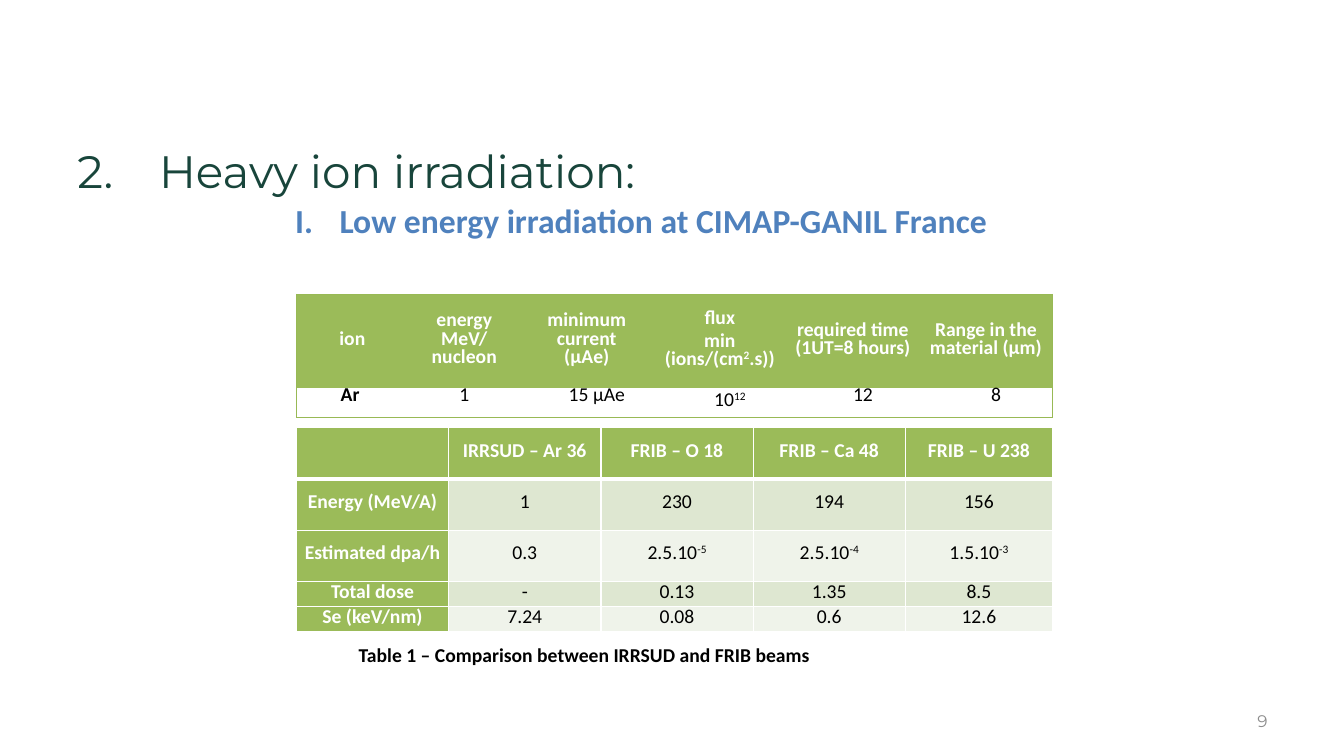
from dataclasses import dataclass
from typing import Any, Optional

import pptx
import pptx.dml.color
import pptx.enum.text
import pptx.oxml
import pptx.oxml.ns
import pptx.util
from pptx.util import Inches

ALIGN = pptx.enum.text.PP_ALIGN
ANCHOR = pptx.enum.text.MSO_ANCHOR


@dataclass(frozen=True)
class Theme:
    heading_font: str = "Montserrat"
    body_font: str = "Calibri"
    heading: str = "18453B"
    subheading: str = "4F81BD"
    page: str = "8C8C8C"
    black: str = "000000"
    white: str = "FFFFFF"
    green: str = "9BBB59"
    edge: str = "98B955"
    band_dark: str = "DEE7D1"
    band_light: str = "EFF3EA"
    heading_size: float = 32.4
    subheading_size: float = 24
    body_size: float = 14
    page_size: float = 12


@dataclass(frozen=True)
class Box:
    left: float
    top: float
    width: float
    height: float

    def lengths(self) -> tuple:
        return Inches(self.left), Inches(self.top), Inches(self.width), Inches(self.height)


@dataclass(frozen=True)
class Edge:
    color: str
    points: float


@dataclass(frozen=True)
class CellLook:
    fill: str
    color: str
    bold: bool
    edges: dict
    inset: float
    anchor: Any = ANCHOR.MIDDLE
    before: float = 0
    after: float = 0
    indent: float = 0


THEME = Theme()


def write(frame: Any, text: str, *, size: float = THEME.body_size,
          font: str = THEME.body_font, color: str = THEME.black, bold: bool = False,
          align: Any = ALIGN.LEFT, spacing: Optional[float] = None, before: float = 0,
          after: float = 0, margin: float = 0, indent: float = 0,
          numbering: str = "", start: int = 1) -> None:
    lines = text.split("\n")
    for index, line in enumerate(lines):
        paragraph = frame.add_paragraph() if index else frame.paragraphs[0]
        paragraph.alignment = align
        if spacing:
            paragraph.line_spacing = pptx.util.Pt(spacing)
        if index:
            paragraph.space_before = pptx.util.Pt(before)
        if index == len(lines) - 1:
            paragraph.space_after = pptx.util.Pt(after)
        properties = paragraph._p.get_or_add_pPr()
        properties.set("marL", str(Inches(margin)))
        properties.set("indent", str(Inches(indent)))
        if numbering:
            number = pptx.oxml.parse_xml(
                f'<a:buAutoNum {pptx.oxml.ns.nsdecls("a")} type="{numbering}" startAt="{start}"/>')
            properties.append(number)
        for part_index, part in enumerate(line.split("\v")):
            if part_index:
                paragraph.add_line_break()
            for piece_index, piece in enumerate(part.split("^")):
                if not piece:
                    continue
                run = paragraph.add_run()
                run.text = piece
                run.font.size = pptx.util.Pt(size)
                run.font.name = font
                run.font.bold = bold
                run.font.color.rgb = pptx.dml.color.RGBColor.from_string(color)
                if piece_index % 2:
                    run.font._element.set("baseline", "30000")


def add_text(slide: Any, box: Box, text: str, *, anchor: Any = ANCHOR.TOP,
             wrap: bool = True, **style: Any) -> None:
    frame = slide.shapes.add_textbox(*box.lengths()).text_frame
    frame.word_wrap = wrap
    frame.vertical_anchor = anchor
    write(frame, text, **style)


def draw_edges(cell: Any, edges: dict) -> None:
    properties = cell._tc.get_or_add_tcPr()
    for side in "LRTB":
        edge = edges.get(side)
        paint = f'<a:solidFill><a:srgbClr val="{edge.color}"/></a:solidFill>' if edge else "<a:noFill/>"
        width = pptx.util.Pt(edge.points) if edge else 0
        properties.append(pptx.oxml.parse_xml(
            f'<a:ln{side} {pptx.oxml.ns.nsdecls("a")} w="{width}">{paint}</a:ln{side}>'))


def fill_cell(cell: Any, text: str, look: CellLook) -> None:
    draw_edges(cell, look.edges)
    cell.fill.solid()
    cell.fill.fore_color.rgb = pptx.dml.color.RGBColor.from_string(look.fill)
    cell.margin_left = cell.margin_right = Inches(look.inset)
    cell.margin_top = cell.margin_bottom = 0
    cell.vertical_anchor = look.anchor
    write(cell.text_frame, text, color=look.color, bold=look.bold, align=ALIGN.CENTER,
          spacing=13, before=look.before, after=look.after, indent=look.indent)


def add_grid(slide: Any, box: Box, widths: list, heights: list, rows: list, look_at: Any) -> None:
    grid = slide.shapes.add_table(len(rows), len(widths), *box.lengths()).table
    grid.first_row = grid.horz_banding = False
    for column, width in zip(grid.columns, widths):
        column.width = Inches(width)
    for row, height in zip(grid.rows, heights):
        row.height = Inches(height)
    for r, texts in enumerate(rows):
        for c, text in enumerate(texts):
            fill_cell(grid.cell(r, c), text, look_at(r, c))


ION_ROWS = [
    ["ion", "energy\vMeV/nucleon", "minimum current\v(µAe)", "flux\nmin (ions/(cm^2^.s))",
     "required time\v(1UT=8 hours)", "Range in the material (µm)"],
    ["Ar ", "1", "15 µAe", "10^12^", "12", "8"],
]
BEAM_ROWS = [
    ["", "IRRSUD – Ar 36", "FRIB – O 18", "FRIB – Ca 48", "FRIB – U 238"],
    ["Energy (MeV/A)", "1", "230", "194", "156"],
    ["Estimated dpa/h ", "0.3", "2.5.10^-5^", "2.5.10^-4^", "1.5.10^-3^"],
    ["Total dose", "-", "0.13", "1.35", "8.5"],
    ["Se (keV/nm)", "7.24", "0.08", "0.6", "12.6"],
]


def ion_look(row: int, column: int) -> CellLook:
    outline = {"L": column == 0, "R": column == 5, "T": row == 0, "B": row == 1}
    edges = {side: Edge(THEME.edge, 0.75) for side, shown in outline.items() if shown}
    if row == 0:
        return CellLook(THEME.green, THEME.white, True, edges, 0.05, before=3, after=3)
    return CellLook(THEME.white, THEME.black, column == 0, edges, 0.05,
                    anchor=ANCHOR.MIDDLE if column == 3 else ANCHOR.TOP,
                    after=6, indent=0.2 if column > 1 else 0)


def beam_look(row: int, column: int) -> CellLook:
    edges = {side: Edge(THEME.white, 1) for side in "LRTB"}
    if row < 2:
        edges["B" if row == 0 else "T"] = Edge(THEME.white, 3)
    if row == 0 or column == 0:
        return CellLook(THEME.green, THEME.white, True, edges, 0.07)
    band = THEME.band_dark if row % 2 else THEME.band_light
    return CellLook(band, THEME.black, False, edges, 0.07)


def main() -> None:
    deck = pptx.Presentation()
    deck.slide_width, deck.slide_height = Inches(13.33), Inches(7.5)
    slide = deck.slides.add_slide(deck.slide_layouts[6])
    add_text(slide, Box(0.67, 1.37, 12, 0.53), "Heavy ion irradiation:",
             size=THEME.heading_size, font=THEME.heading_font, color=THEME.heading,
             margin=0.81, indent=-0.81, numbering="arabicPeriod", start=2)
    add_text(slide, Box(9.56, 6.95, 3.11, 0.4), "9", size=THEME.page_size,
             font=THEME.heading_font, color=THEME.page, align=ALIGN.RIGHT, anchor=ANCHOR.MIDDLE)
    add_grid(slide, Box(2.94, 2.92, 7.5, 1.22), [1.11] * 2 + [1.32] * 4, [0.93, 0.29],
             ION_ROWS, ion_look)
    add_grid(slide, Box(2.94, 4.24, 7.5, 2.03), [1.51] * 4 + [1.46], [0.51] * 3 + [0.25] * 2,
             BEAM_ROWS, beam_look)
    add_text(slide, Box(3.46, 6.33, 7.14, 0.34),
             "Table 1 – Comparison between IRRSUD and FRIB beams", bold=True)
    add_text(slide, Box(2.83, 1.93, 8.27, 0.5), "Low energy irradiation at CIMAP-GANIL France",
             size=THEME.subheading_size, color=THEME.subheading, bold=True,
             margin=0.44, indent=-0.44, numbering="romanUcPeriod")
    deck.save("out.pptx")


if __name__ == "__main__":
    main()
